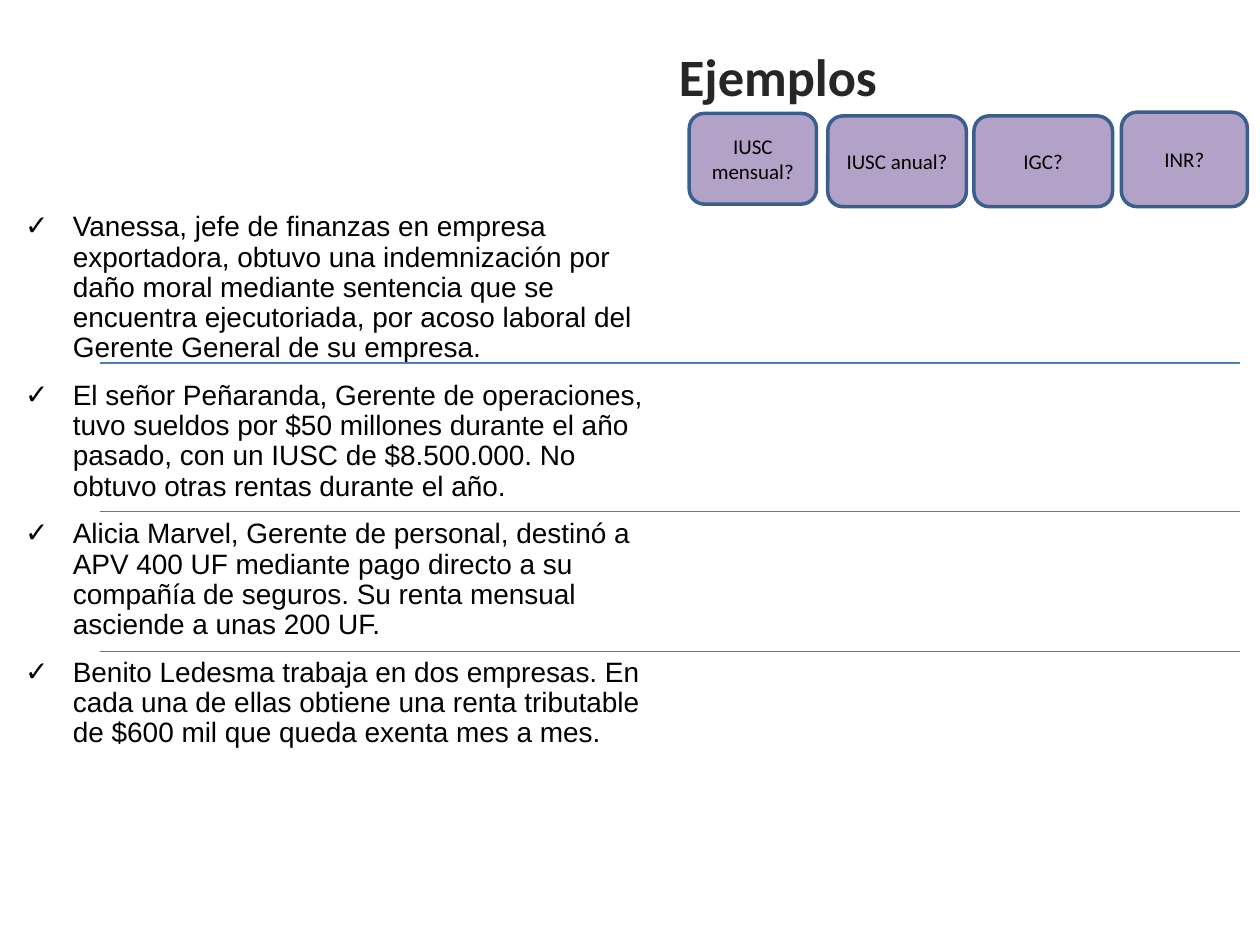
from lxml.etree import SubElement
from pptx import Presentation
from pptx.dml.color import RGBColor
from pptx.enum.shapes import MSO_CONNECTOR, MSO_SHAPE
from pptx.enum.text import MSO_ANCHOR, PP_ALIGN
from pptx.oxml.ns import qn
from pptx.util import Inches, Pt

HUES = {"title": "262626", "text": "000000", "box": "B3A2C7",
        "edge": "3A5F8C", "rule": "4B7EBC"}
FONTS = {
    "title": {"name": "Calibri", "size": Pt(30), "bold": True},
    "case": {"name": "Arial", "size": Pt(16)},
    "box": {"name": "Calibri", "size": Pt(12)},
}
CASES = [
    "Vanessa, jefe de finanzas en empresa exportadora, obtuvo una indemnización "
    "por daño moral mediante sentencia que se encuentra ejecutoriada, por acoso "
    "laboral del Gerente General de su empresa.",
    "El señor Peñaranda, Gerente de operaciones, tuvo sueldos por $50 millones "
    "durante el año pasado, con un IUSC de $8.500.000. No obtuvo otras rentas "
    "durante el año.",
    "Alicia Marvel, Gerente de personal, destinó a APV 400 UF mediante pago "
    "directo a su compañía de seguros. Su renta mensual asciende a unas 200 UF.",
    "Benito Ledesma trabaja en dos empresas. En cada una de ellas obtiene una "
    "renta tributable de $600 mil que queda exenta mes a mes.",
]
TAXES = [
    ("IUSC mensual?", 5.47, 0.9, 1.01, 0.72),
    ("IUSC anual?", 6.57, 0.92, 1.1, 0.72),
    ("IGC?", 7.73, 0.92, 1.1, 0.72),
    ("INR?", 8.9, 0.89, 1, 0.75),
]
RULES = [2.88, 4.06, 5.17]


def tint(hue):
    """Return the named colour."""
    return RGBColor.from_string(HUES[hue])


def style(item, values):
    """Set attributes of an item from a dict."""
    for name, value in values.items():
        setattr(item, name, value)


def write(para, text, look, hue="text"):
    """Write one run of formatted text in a paragraph."""
    run = para.add_run()
    run.text = text
    style(run.font, FONTS[look])
    run.font.color.rgb = tint(hue)


def set_title(slide, text):
    """Place and fill the title."""
    title = slide.shapes.title
    style(title, {"left": Inches(2.86), "top": Inches(0.13),
                  "width": Inches(6.63), "height": Inches(0.94)})
    title.text_frame.vertical_anchor = MSO_ANCHOR.MIDDLE
    para = title.text_frame.paragraphs[0]
    para.alignment = PP_ALIGN.CENTER
    write(para, text, "title", "title")


def add_cases(slide, cases):
    """Add the list of cases with tick bullets."""
    box = slide.shapes.add_textbox(Inches(0.1), Inches(1.64), Inches(5.21), Inches(4.96))
    frame = box.text_frame
    frame.word_wrap = True
    for i, case in enumerate(cases):
        para = frame.add_paragraph() if i else frame.paragraphs[0]
        props = para._p.get_or_add_pPr()
        props.set("marL", str(Inches(0.38)))
        props.set("indent", str(-Inches(0.38)))
        SubElement(props, qn("a:buFont"), typeface="Arial")
        SubElement(props, qn("a:buChar"), char="✓")
        style(para, {"line_spacing": 0.9, "space_before": Pt(10 if i else 0)})
        write(para, case, "case")


def add_tax(slide, text, *place):
    """Add a rounded box naming a tax."""
    box = slide.shapes.add_shape(MSO_SHAPE.ROUNDED_RECTANGLE, *map(Inches, place))
    box.shadow.inherit = False
    box.fill.solid()
    box.fill.fore_color.rgb = tint("box")
    box.line.color.rgb = tint("edge")
    box.line.width = Pt(2)
    style(box.text_frame, {"word_wrap": True, "vertical_anchor": MSO_ANCHOR.MIDDLE})
    para = box.text_frame.paragraphs[0]
    para.alignment = PP_ALIGN.CENTER
    write(para, text, "box")


def add_rule(slide, y):
    """Add a thin line between two cases."""
    rule = slide.shapes.add_connector(
        MSO_CONNECTOR.STRAIGHT, Inches(0.79), Inches(y), Inches(9.84), Inches(y))
    rule.line.color.rgb = tint("rule")
    rule.line.width = Pt(0.75)
    SubElement(rule._element.spPr, qn("a:effectLst"))


def main():
    """Build and save the slide."""
    deck = Presentation()
    style(deck, {"slide_width": Inches(10), "slide_height": Inches(7.5)})
    slide = deck.slides.add_slide(deck.slide_layouts[5])
    set_title(slide, "Ejemplos")
    add_cases(slide, CASES)
    for tax in TAXES:
        add_tax(slide, *tax)
    for y in RULES:
        add_rule(slide, y)
    deck.save("out.pptx")


if __name__ == "__main__":
    main()
